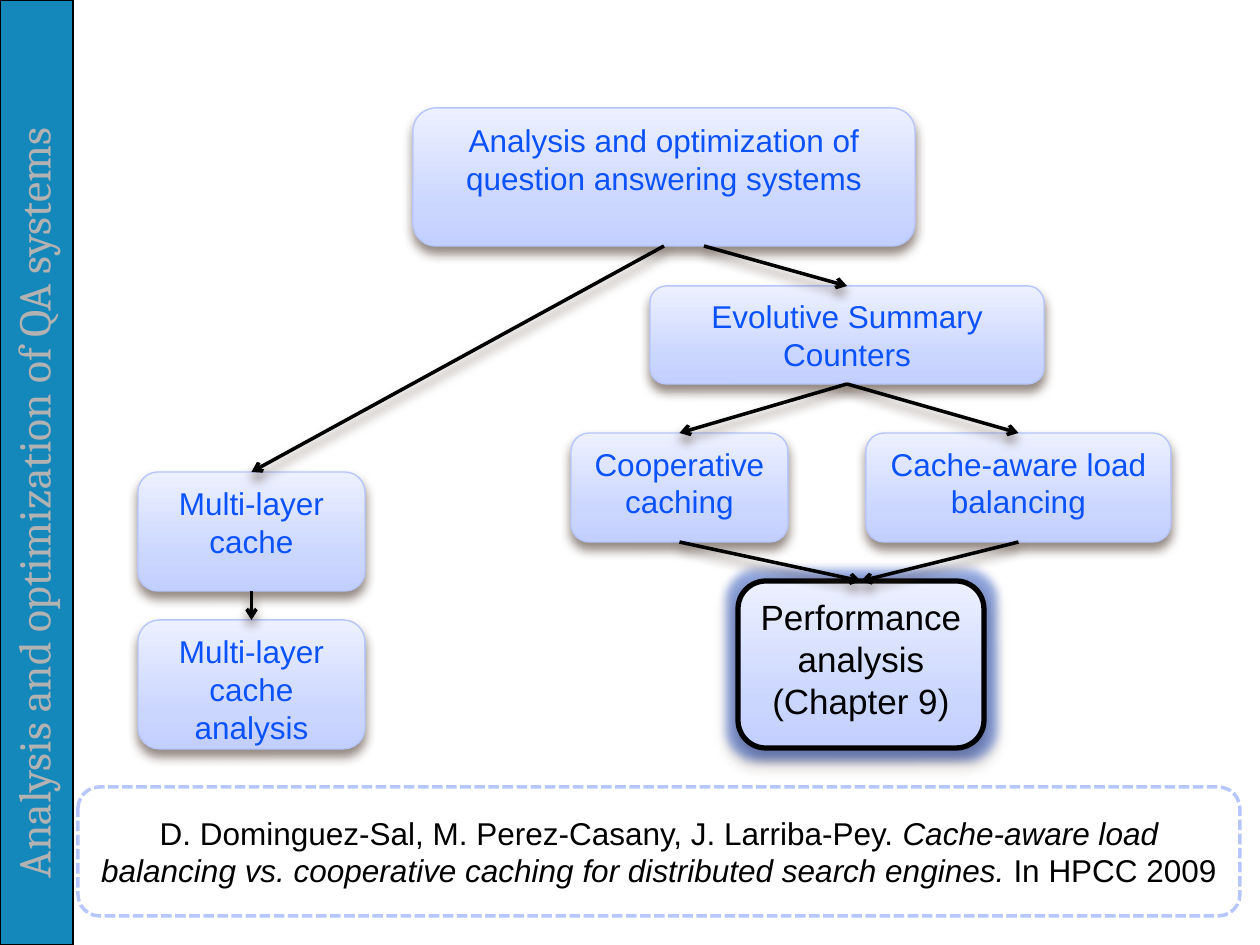
import pptx
import pptx.util
import pptx.dml.color
import pptx.enum.dml
import pptx.enum.shapes
import pptx.enum.text
import pptx.oxml
import pptx.oxml.ns

PX = 914400 / 126
BLUE, EDGE, BLACK = "0B52FC", "B7C6FE", "000000"
STOPS = [(0, "ECF0FF"), (72, "CBD6FF"), (100, "C3CFFF")]
GLOW = ('<a:glow rad="127000"><a:srgbClr val="3560D0">'
        '<a:alpha val="50000"/></a:srgbClr></a:glow>')
SHADE = ('<a:outerShdw blurRad="76200" dist="50800" dir="5400000" rotWithShape="0">'
         '<a:srgbClr val="4E3B30"><a:alpha val="60000"/></a:srgbClr></a:outerShdw>')


def px(*sizes):
    return [pptx.util.Emu(round(size * PX)) for size in sizes]


def color(code):
    return pptx.dml.color.RGBColor.from_string(code)


def node(tag, inner="", attrs=""):
    space = pptx.oxml.ns.nsdecls("a")
    return pptx.oxml.parse_xml(f"<a:{tag} {space} {attrs}>{inner}</a:{tag}>")


class Chart:
    """Draws boxes, arrows and text on one slide in a shared style."""

    def __init__(self, slide, font="Arial"):
        self.shapes = slide.shapes
        self.font = font

    def label(self, frame, lines, size, tint, font=None):
        frame.text = "\n".join(lines)
        for par in frame.paragraphs:
            par.alignment = pptx.enum.text.PP_ALIGN.CENTER
            par.font.name = font or self.font
            par.font.size = pptx.util.Pt(size)
            par.font.color.rgb = color(tint)

    def shape(self, kind, area, fill, edge, width):
        shape = self.shapes.add_shape(kind, *px(*area))
        shape.shadow.inherit = False
        shape.fill.solid()
        shape.fill.fore_color.rgb = color(fill)
        shape.line.color.rgb = color(edge)
        shape.line.width = pptx.util.Pt(width)
        return shape

    def round(self, area, edge=EDGE, width=0.79):
        kind = pptx.enum.shapes.MSO_SHAPE.ROUNDED_RECTANGLE
        return self.shape(kind, area, "FFFFFF", edge, width)

    def bar(self, area, fill):
        self.shape(pptx.enum.shapes.MSO_SHAPE.RECTANGLE, area, fill, BLACK, 1)

    def side(self, area, text):
        box = self.shapes.add_textbox(*px(*area))
        box.rotation = 270
        self.label(box.text_frame, [text], 26, "B2B2B2", "Cambria")
        box.text_frame.auto_size = pptx.enum.text.MSO_AUTO_SIZE.SHAPE_TO_FIT_TEXT
        box.text_frame.word_wrap = True

    def box(self, area, *lines, size=18, tint=BLUE, edge=EDGE, width=0.79, glow=""):
        box = self.round(area, edge, width)
        box.fill.gradient()
        box.fill.gradient_angle = 270
        props = box._element.spPr
        stops = props.find(".//" + pptx.oxml.ns.qn("a:gsLst"))
        for stop in list(stops):
            stops.remove(stop)
        for place, code in STOPS:
            stops.append(node("gs", f'<a:srgbClr val="{code}"/>', f'pos="{place * 1000}"'))
        self.shade(props, glow)
        box.text_frame.vertical_anchor = pptx.enum.text.MSO_ANCHOR.TOP
        self.label(box.text_frame, lines, size, tint)
        return box

    def shade(self, props, glow=""):
        for old in props.findall(pptx.oxml.ns.qn("a:effectLst")):
            props.remove(old)
        props.append(node("effectLst", glow + SHADE))

    def arrow(self, start, end, point=None):
        kind = pptx.enum.shapes.MSO_CONNECTOR.STRAIGHT
        line = self.shapes.add_connector(kind, *px(*(point or (0, 0)), 0, 0))
        if not point:
            line.begin_connect(start, 2)
        line.end_connect(end, 0)
        line.line.color.rgb = color(BLACK)
        line.line.width = pptx.util.Pt(2)
        props = line._element.spPr
        props.find(pptx.oxml.ns.qn("a:ln")).append(node("tailEnd", attrs='type="arrow"'))
        self.shade(props)

    def cite(self, area, parts):
        box = self.round(area, EDGE, 2)
        box.line.dash_style = pptx.enum.dml.MSO_LINE.SQUARE_DOT
        box.text_frame.vertical_anchor = pptx.enum.text.MSO_ANCHOR.MIDDLE
        self.label(box.text_frame, [""], 18, BLACK)
        for text, slant in parts:
            run = box.text_frame.paragraphs[0].add_run()
            run.text = text
            run.font.italic = slant


def main():
    deck = pptx.Presentation()
    deck.slide_width, deck.slide_height = px(1260, 945)
    chart = Chart(deck.slides.add_slide(deck.slide_layouts[6]))
    chart.bar((0, 0, 73, 945), "1588BB")
    chart.side((-410, 469, 886, 68), "Analysis and optimization of QA systems")

    root = chart.box((413, 108, 502, 138),
                     "Analysis and optimization of question answering systems")
    multi = chart.box((138, 472, 227, 119), "Multi-layer cache")
    coop = chart.box((571, 433, 217, 109), "Cooperative caching")
    load = chart.box((866, 433, 305, 109), "Cache-aware load balancing")
    count = chart.box((650, 286, 394, 98), "Evolutive Summary Counters")
    chart.arrow(count, coop)
    chart.arrow(count, load)
    chart.arrow(root, count, point=(704, 246))
    perf = chart.box((738, 581, 246, 167), "Performance analysis", "(Chapter 9)",
                     size=20, tint=BLACK, edge=BLACK, width=3, glow=GLOW)
    chart.arrow(coop, perf)
    chart.arrow(load, perf)
    chart.arrow(root, multi)
    study = chart.box((138, 620, 227, 129), "Multi-layer cache analysis")
    chart.arrow(multi, study)

    chart.cite((78, 787, 1162, 129), [
        ("D. Dominguez-Sal, M. Perez-Casany, J. Larriba-Pey. ", False),
        ("Cache-aware load balancing vs. cooperative caching "
         "for distributed search engines. ", True),
        ("In HPCC 2009", False)])
    deck.save("out.pptx")


if __name__ == "__main__":
    main()
